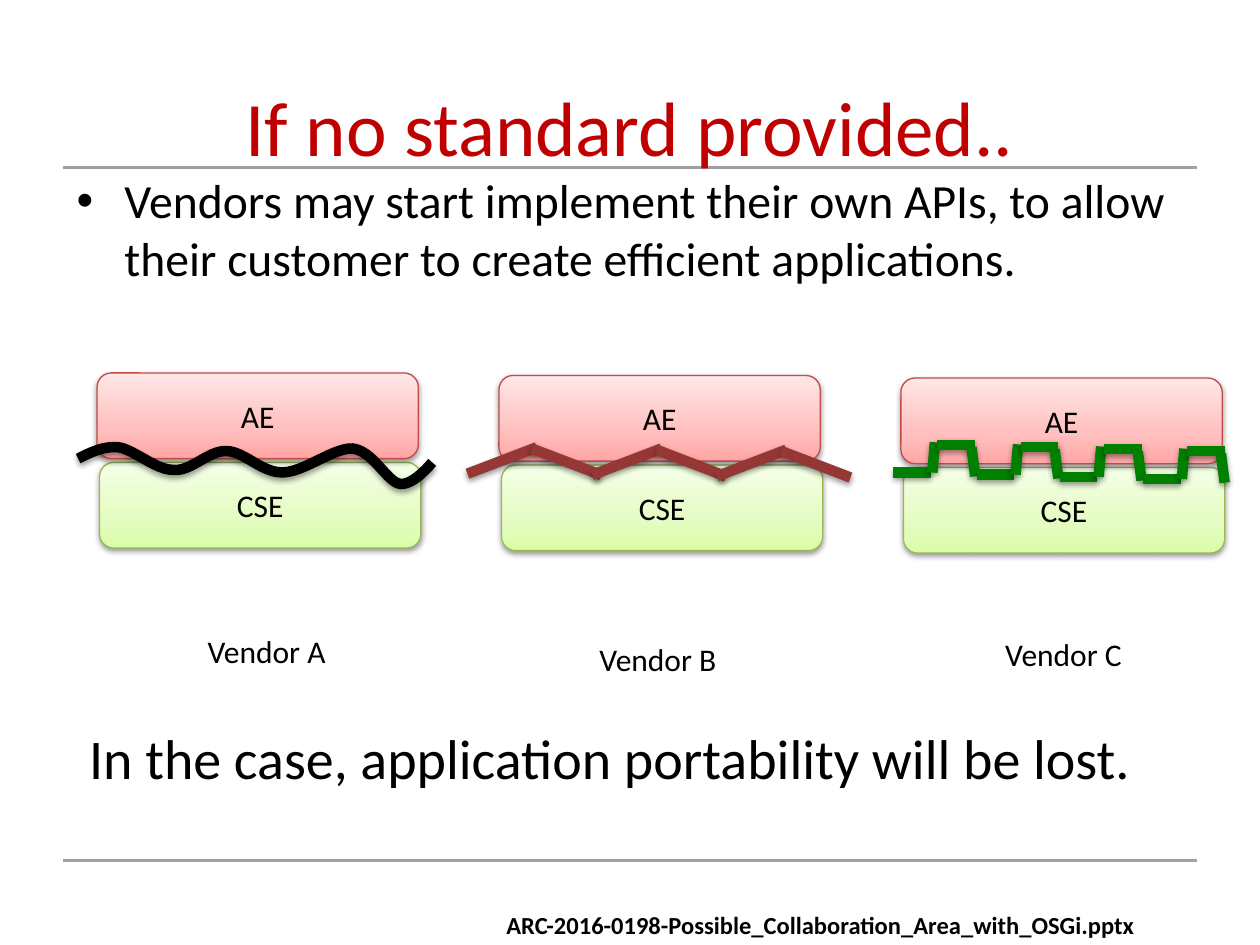
"""Build the slide on vendor-specific APIs between AE and CSE."""
from copy import deepcopy
from dataclasses import dataclass

from lxml import etree
from pptx import Presentation
from pptx.dml.color import RGBColor
from pptx.enum.shapes import MSO_CONNECTOR, MSO_SHAPE
from pptx.enum.text import MSO_ANCHOR, PP_ALIGN
from pptx.oxml.ns import qn
from pptx.util import Inches, Pt

STRAIGHT = MSO_CONNECTOR.STRAIGHT
ROUNDED = MSO_SHAPE.ROUNDED_RECTANGLE
TOP, MIDDLE = MSO_ANCHOR.TOP, MSO_ANCHOR.MIDDLE
LEFT, CENTER = PP_ALIGN.LEFT, PP_ALIGN.CENTER

COLUMNS, ROWS = 100, 75
CELL = Inches(0.1)


@dataclass(frozen=True)
class Theme:
    """Hold the colours and type sizes of the slide."""
    font: str = "Calibri"
    ink: str = "000000"
    title: str = "C00000"
    rule: str = "A0A0A3"
    zigzag: str = "953735"
    square: str = "008000"
    ae_line: str = "BF4C48"
    ae_fill: tuple = ("FFA6A5", "FFC0BF", "FFE7E7")
    cse_line: str = "98B955"
    cse_fill: tuple = ("DAFDA7", "E4FCC2", "F5FFE7")
    stops: tuple = (0, 0.35, 1)
    title_size: float = 44
    closing_size: float = 32
    body_size: float = 27.2
    label_size: float = 18
    footer_size: float = 14
    rule_width: float = 1.75
    box_width: float = 0.75
    wave_width: float = 6


THEME = Theme()
WAVE = [
    (6.2, 36.4), (7.2, 35.9), (8.2, 35.4), (9.4, 35.5),
    (10.7, 35.7), (12.3, 37.3), (13.8, 37.3),
    (15.2, 37.4), (16.5, 35.8), (17.9, 35.8),
    (19.4, 35.8), (20.7, 37.5), (22.4, 37.5),
    (24.1, 37.5), (26.5, 35.5), (28, 35.6),
    (29.6, 35.8), (30.7, 38.2), (31.7, 38.4),
    (32.8, 38.6), (34.3, 36.7), (34.3, 36.7),
]
SQUARE = [(0, 0, 3, 0), (3.1, 0, 3.3, -2.4),
          (3.5, -2.2, 6.5, -2.2), (6.5, 0.3, 6.2, -2)]


def grid(*cells):
    """Turn grid counts into lengths."""
    return [int(count * CELL) for count in cells]


def assign(target, values):
    """Set each attribute named in a dict."""
    for name, value in values.items():
        setattr(target, name, value)


def stroke(shape, color, width):
    """Give a shape a solid outline."""
    shape.line.color.rgb = RGBColor.from_string(color)
    shape.line.width = Pt(width)


def set_effect(shape, shadow=True):
    """Give a shape a soft shadow below, or none."""
    effects = etree.SubElement(shape._element.spPr, qn("a:effectLst"))
    if shadow:
        outer = etree.SubElement(effects, qn("a:outerShdw"), blurRad="40000",
                                 dist="20000", dir="5400000", rotWithShape="0")
        color = etree.SubElement(outer, qn("a:srgbClr"), val=THEME.ink)
        etree.SubElement(color, qn("a:alpha"), val="38000")


def write(frame, text, size, color=THEME.ink, bold=False, align=LEFT,
          anchor=TOP, wrap=True, bullet=False):
    """Write one formatted paragraph into a text frame."""
    assign(frame, {"word_wrap": wrap, "vertical_anchor": anchor})
    para = frame.paragraphs[0]
    para.alignment = align
    if bullet:
        props = para._p.get_or_add_pPr()
        assign_indent = {"marL": Inches(0.38), "indent": -Inches(0.38)}
        for name, value in assign_indent.items():
            props.set(name, str(value))
        etree.SubElement(props, qn("a:buFont"), typeface="Arial")
        etree.SubElement(props, qn("a:buChar"), char="•")
    span = para.add_run()
    span.text = text
    assign(span.font, {"name": THEME.font, "size": Pt(size), "bold": bold})
    span.font.color.rgb = RGBColor.from_string(color)


def add_text(page, place, text, size, **options):
    """Add a text box."""
    box = page.shapes.add_textbox(*grid(*place))
    write(box.text_frame, text, size, **options)


def add_line(page, ends, color, width, shadow=True):
    """Add a straight line."""
    line = page.shapes.add_connector(STRAIGHT, *grid(*ends))
    stroke(line, color, width)
    set_effect(line, shadow)


def add_box(page, left, top, text, colors, outline):
    """Add a rounded box with a vertical gradient."""
    box = page.shapes.add_shape(ROUNDED, *grid(left, top, 25.5, 6.8))
    box.fill.gradient()
    box.fill.gradient_angle = 90
    stop_list = box._element.spPr.find(".//" + qn("a:gsLst"))
    stop_list.insert(1, deepcopy(stop_list[0]))
    for stop, color, position in zip(box.fill.gradient_stops, colors, THEME.stops):
        stop.color.rgb = RGBColor.from_string(color)
        stop.position = position
    stroke(box, outline, THEME.box_width)
    set_effect(box)
    write(box.text_frame, text, THEME.label_size, align=CENTER, anchor=MIDDLE)


def add_stack(page, index):
    """Add the AE box above the CSE box for one vendor."""
    left, top = 7.7 + 31.9 * index, 29.6 + 0.2 * index
    add_box(page, left + 0.2, top + 7.1, "CSE", THEME.cse_fill, THEME.cse_line)
    add_box(page, left, top, "AE", THEME.ae_fill, THEME.ae_line)


def curve_points(knots, steps=12):
    """Yield points along a chain of cubic curves."""
    for first in range(0, len(knots) - 1, 3):
        corners = knots[first:first + 4]
        for step in range(1, steps + 1):
            t = step / steps
            weights = ((1 - t) ** 3, 3 * t * (1 - t) ** 2,
                       3 * t ** 2 * (1 - t), t ** 3)
            yield grid(*(sum(w * corner[axis] for w, corner in zip(weights, corners))
                         for axis in (0, 1)))


def add_wave(page):
    """Add the smooth interface of the first vendor."""
    builder = page.shapes.build_freeform(*grid(*WAVE[0]))
    builder.add_line_segments(list(curve_points(WAVE)), close=False)
    wave = builder.convert_to_shape()
    wave.fill.background()
    stroke(wave, THEME.ink, THEME.wave_width)
    set_effect(wave)


def add_zigzag(page):
    """Add the pointed interface of the second vendor."""
    for index in range(3):
        x, y = 37.1 + 9.9 * index, 37.6 + 0.1 * index
        for ends in ((x, y, x + 5.5, y - 2.1), (x + 10.6, y + 0.1, x + 5.1, y - 2)):
            add_line(page, ends, THEME.zigzag, THEME.wave_width)


def add_square_wave(page):
    """Add the stepped interface of the third vendor."""
    for index in range(4):
        x, y = 70.9 + 6.6 * index, 37.5 + 0.17 * index
        for x1, y1, x2, y2 in SQUARE:
            add_line(page, (x + x1, y + y1, x + x2, y + y2),
                     THEME.square, THEME.wave_width)


def main():
    """Build and save the slide."""
    deck = Presentation()
    assign(deck, {"slide_width": COLUMNS * CELL, "slide_height": ROWS * CELL})
    page = deck.slides.add_slide(deck.slide_layouts[6])
    add_text(page, (39.2, 71.7, 55.8, 3.3),
             "ARC-2016-0198-Possible_Collaboration_Area_with_OSGi.pptx",
             THEME.footer_size, bold=True)
    for row in (68.3, 13.3):
        add_line(page, (5, row, 95, row), THEME.rule, THEME.rule_width, shadow=False)
    add_text(page, (5, 5.8, 90, 12.5), "If no standard provided..",
             THEME.title_size, color=THEME.title, align=CENTER)
    add_text(page, (5.1, 13.1, 90, 8.2),
             "Vendors may start implement their own APIs, to allow "
             "their customer to create efficient applications.",
             THEME.body_size, bullet=True)
    for index in range(3):
        add_stack(page, index)
    add_wave(page)
    add_zigzag(page)
    add_square_wave(page)
    for name, left, top in (("A", 15.5, 49.7), ("B", 46.6, 50.3), ("C", 78.8, 49.9)):
        add_text(page, (left, top, 11.6, 4), f"Vendor {name}",
                 THEME.label_size, wrap=False)
    add_text(page, (6.1, 56.9, 90, 8.2),
             "In the case, application portability will be lost.", THEME.closing_size)
    deck.save("out.pptx")


if __name__ == "__main__":
    main()
